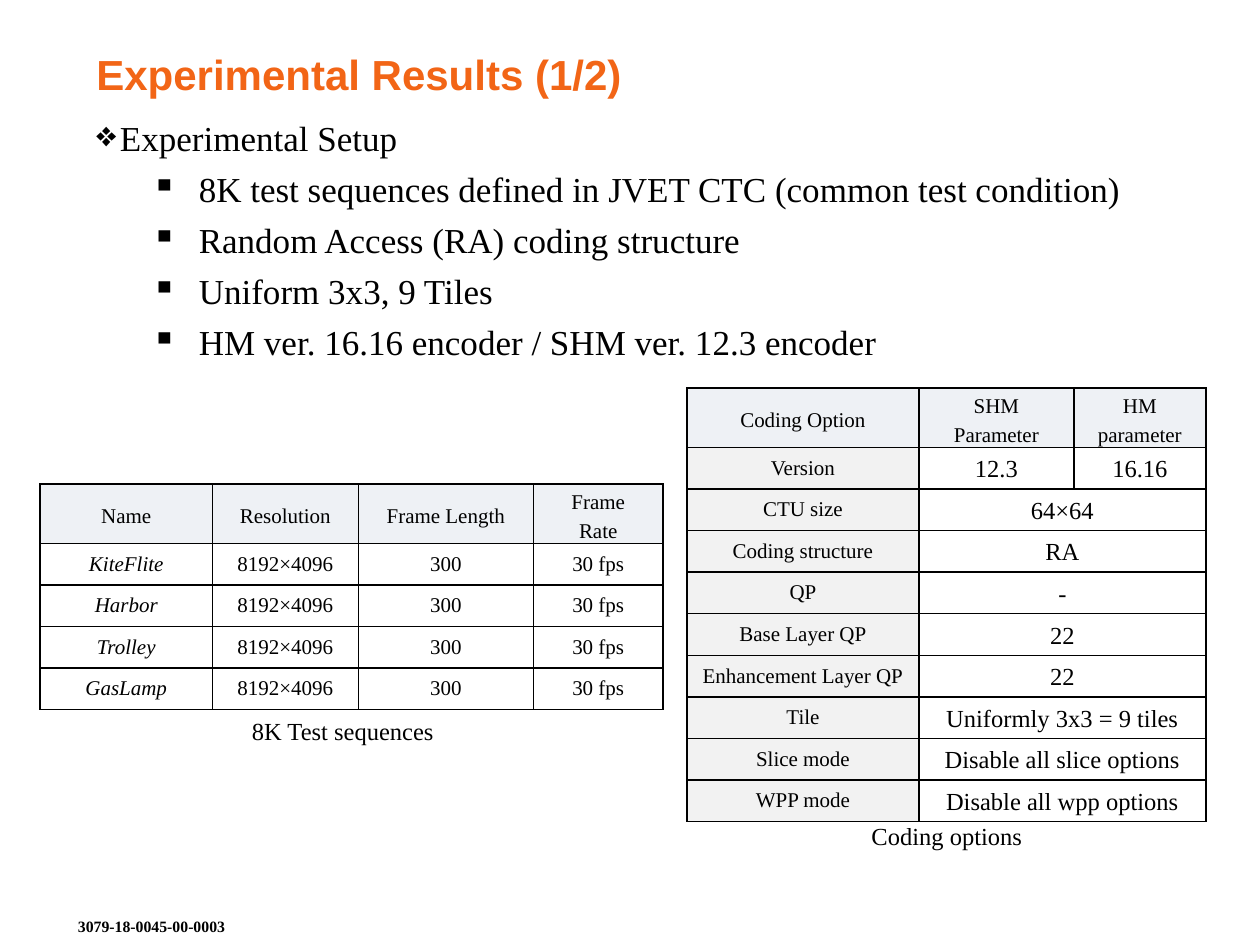
"""Build the experimental setup slide with its two parameter tables."""
from lxml import etree
from pptx import Presentation
from pptx.dml.color import RGBColor
from pptx.enum.text import MSO_ANCHOR, PP_ALIGN
from pptx.oxml.ns import qn
from pptx.util import Pt

LEFT, CENTER = PP_ALIGN.LEFT, PP_ALIGN.CENTER
TOP, MIDDLE, BOTTOM = MSO_ANCHOR.TOP, MSO_ANCHOR.MIDDLE, MSO_ANCHOR.BOTTOM
BLACK, WHITE, ORANGE = "000000", "FFFFFF", "F26516"
HEADER_FILL, LABEL_FILL = "EEF1F5", "F2F2F2"
SERIF, SANS = "Times New Roman", "Arial"
HEADER_HEIGHT, ROW_HEIGHT = 34, 23.76

TITLE = "Experimental Results (1/2)"
BODY = [
    (0, "Experimental Setup"),
    (1, "8K test sequences defined in JVET CTC (common test condition)"),
    (1, "Random Access (RA) coding structure"),
    (1, "Uniform 3x3, 9 Tiles"),
    (1, "HM ver. 16.16 encoder / SHM ver. 12.3 encoder"),
]
BULLETS = [("❖", 13.5, -13.5), ("▪", 58.5, -27)]
SEQUENCES = [["Name", "Resolution", "Frame Length", "Frame\nRate"]] + [
    [name, "8192×4096", "300", "30 fps"]
    for name in ("KiteFlite", "Harbor", "Trolley", "GasLamp")
]
CODING_OPTIONS = [
    ["Coding Option", "SHM\nParameter", "HM\nparameter"],
    ["Version", "12.3", "16.16"],
    ["CTU size", "64×64"],
    ["Coding structure", "RA"],
    ["QP", "-"],
    ["Base Layer QP", "22"],
    ["Enhancement Layer QP", "22"],
    ["Tile", "Uniformly 3x3 = 9 tiles"],
    ["Slice mode", "Disable all slice options"],
    ["WPP mode", "Disable all wpp options"],
]
TABLES = [
    {"rows": SEQUENCES, "place": (23, 276.5), "widths": (98.4, 83.4, 100, 74.2),
     "label": {"italic": True}, "label_fill": WHITE, "value": {}, "spacing": 1.0},
    {"rows": CODING_OPTIONS, "place": (392.6, 221.6), "widths": (132.5, 88.6, 75.4),
     "label": {}, "label_fill": LABEL_FILL, "value": {"size": 14}, "spacing": 1.1},
]
CAPTIONS = [
    ("Coding options", (490.3, 465.8, 101.5, 24.5)),
    ("8K Test sequences", (132.2, 405.4, 127.4, 24.5)),
]
FOOTER = "3079-18-0045-00-0003"


def color(value):
    return RGBColor.from_string(value)


def set_font(paragraph, size=12, name=SERIF, fill=BLACK, **extra):
    for attribute, value in {"size": Pt(size), "name": name, **extra}.items():
        setattr(paragraph.font, attribute, value)
    paragraph.font.color.rgb = color(fill)


def write(frame, text, alignment=LEFT, spacing=1.0, **font):
    frame.text = text
    for paragraph in frame.paragraphs:
        paragraph.alignment = alignment
        paragraph.line_spacing = spacing
        set_font(paragraph, **font)


def add_box(slide, place, anchor=TOP, wrap=True):
    frame = slide.shapes.add_textbox(*map(Pt, place)).text_frame
    frame.word_wrap = wrap
    frame.vertical_anchor = anchor
    return frame


def add_body(slide):
    frame = add_box(slide, (48, 66, 636, 420))
    frame.text = "\n".join(text for _, text in BODY)
    for index, ((level, _), paragraph) in enumerate(zip(BODY, frame.paragraphs)):
        bullet, margin, indent = BULLETS[level]
        paragraph.level = level
        paragraph.line_spacing = 0.9
        paragraph.space_before = Pt(7.5 if index else 0)
        properties = paragraph._p.get_or_add_pPr()
        properties.set("marL", str(Pt(margin)))
        properties.set("indent", str(Pt(indent)))
        etree.SubElement(properties, qn("a:buChar")).set("char", bullet)
        set_font(paragraph, size=20)


def add_borders(cell):
    properties = cell._tc.get_or_add_tcPr()
    for index, side in enumerate(("lnL", "lnR", "lnT", "lnB")):
        line = etree.Element(qn(f"a:{side}"), w=str(Pt(1)))
        fill = etree.SubElement(line, qn("a:solidFill"))
        etree.SubElement(fill, qn("a:srgbClr"), val=BLACK)
        properties.insert(index, line)


def format_cell(cell, fill, margin):
    cell.fill.solid()
    cell.fill.fore_color.rgb = color(fill)
    cell.vertical_anchor = MIDDLE
    cell.margin_left = cell.margin_right = Pt(margin)
    cell.margin_top = cell.margin_bottom = 0
    add_borders(cell)


def add_table(slide, rows, place, widths, label, label_fill, value, spacing):
    heights = [HEADER_HEIGHT] + [ROW_HEIGHT] * (len(rows) - 1)
    size = (sum(widths), sum(heights))
    table = slide.shapes.add_table(
        len(rows), len(widths), *map(Pt, place + size)).table
    table.first_row = table.horz_banding = False
    for column, width in zip(table.columns, widths):
        column.width = Pt(width)
    for row_index, (row, height, texts) in enumerate(zip(table.rows, heights, rows)):
        row.height = Pt(height)
        for column_index, cell in enumerate(row.cells):
            if row_index == 0:
                fill, margin, line, font = HEADER_FILL, 5.4, Pt(17), {}
            elif column_index == 0:
                fill, margin, line, font = label_fill, 5, 1.0, label
            else:
                fill, margin, line, font = WHITE, 5, spacing, value
            format_cell(cell, fill, margin)
            if column_index < len(texts):
                write(cell.text_frame, texts[column_index], CENTER, line, **font)
        if len(texts) < len(widths):
            table.cell(row_index, len(texts) - 1).merge(
                table.cell(row_index, len(widths) - 1))


def main():
    presentation = Presentation()
    presentation.slide_width, presentation.slide_height = Pt(720), Pt(540)
    slide = presentation.slides.add_slide(presentation.slide_layouts[6])
    write(add_box(slide, (48, 24, 636, 36), BOTTOM), TITLE,
          size=24, name=SANS, fill=ORANGE, bold=True)
    add_body(slide)
    for table in TABLES:
        add_table(slide, **table)
    for text, place in CAPTIONS:
        write(add_box(slide, place, wrap=False), text, CENTER, size=14)
    write(add_box(slide, (37.5, 520.5, 318, 19.5)), FOOTER, size=9, bold=True)
    presentation.save("out.pptx")


if __name__ == "__main__":
    main()
